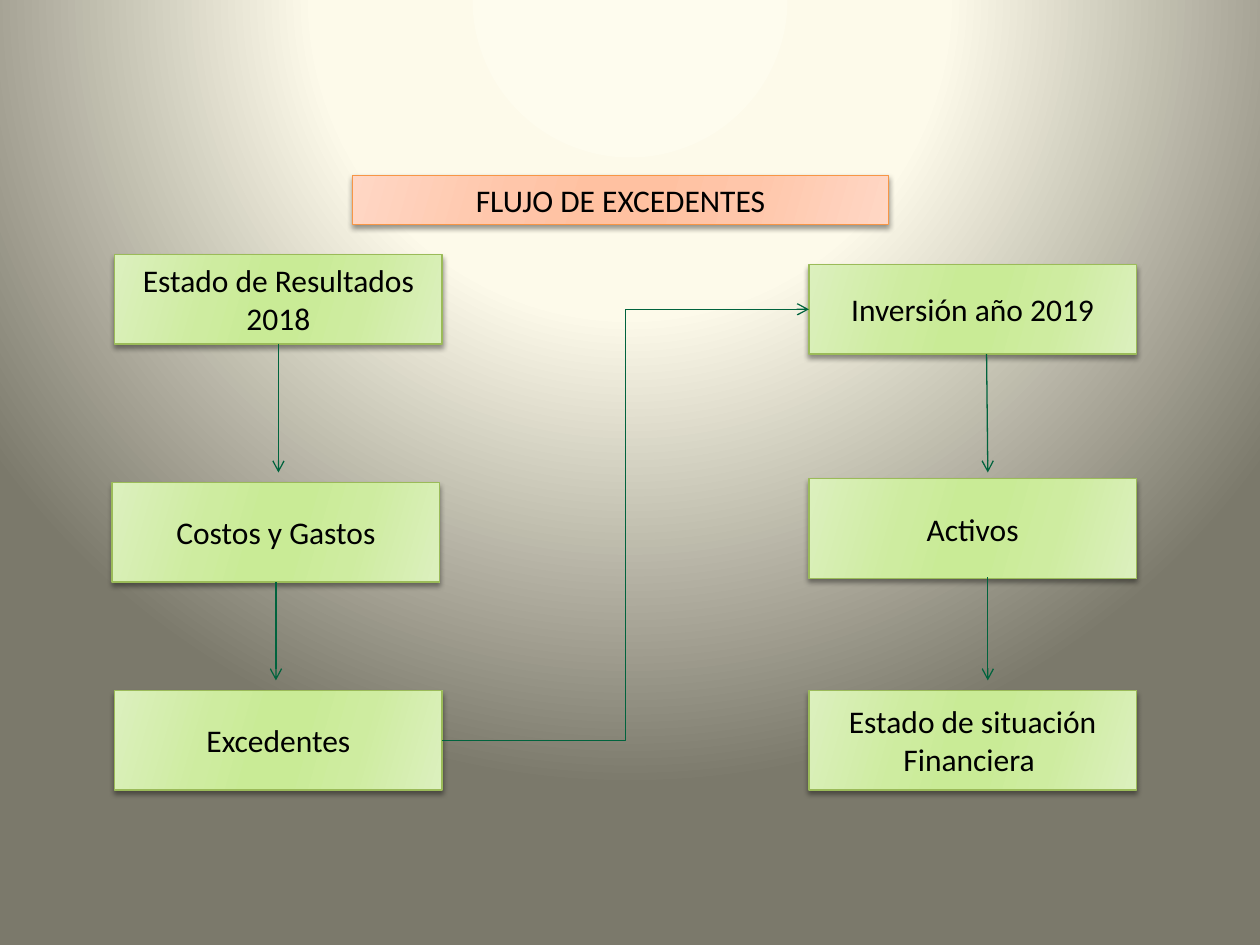
from dataclasses import dataclass

from lxml.etree import SubElement
from pptx import Presentation
from pptx.dml.color import RGBColor
from pptx.enum.shapes import MSO_CONNECTOR, MSO_SHAPE
from pptx.enum.text import MSO_ANCHOR, PP_ALIGN
from pptx.oxml import parse_xml
from pptx.oxml.ns import nsdecls, qn
from pptx.util import Inches, Pt

BLACK = RGBColor(0x00, 0x00, 0x00)
ARROW_GREEN = RGBColor(0x00, 0x63, 0x3D)
CREAM = RGBColor(0xFE, 0xFC, 0xEE)
PALE_CREAM = RGBColor(0xFD, 0xFA, 0xEA)
OLIVE_GREY = RGBColor(0x7B, 0x79, 0x6B)

TOP, LEFT, BOTTOM, RIGHT = range(4)
BOX_W = 2.6
LEFT_X, RIGHT_X = 0.91, 6.42


@dataclass(frozen=True)
class Palette:
    edge: RGBColor
    mid: RGBColor
    center: RGBColor
    line: RGBColor


@dataclass(frozen=True)
class Box:
    text: str
    x: float
    y: float
    w: float
    h: float
    palette: Palette


GREEN = Palette(RGBColor(0xDC, 0xF0, 0xBE), RGBColor(0xCE, 0xEC, 0xA0),
                RGBColor(0xC9, 0xEB, 0x96), RGBColor(0x9B, 0xBB, 0x59))
ORANGE = Palette(RGBColor(0xFF, 0xD7, 0xC5), RGBColor(0xFF, 0xC6, 0xAA),
                 RGBColor(0xFF, 0xC1, 0xA1), RGBColor(0xF7, 0x96, 0x46))

RESULTS = Box("Estado de Resultados 2018", LEFT_X, 2.02, BOX_W, 0.71, GREEN)
COSTS = Box("Costos y Gastos", 0.89, 3.83, BOX_W, 0.79, GREEN)
SURPLUS = Box("Excedentes", LEFT_X, 5.48, BOX_W, 0.79, GREEN)
INVESTMENT = Box("Inversión año 2019", RIGHT_X, 2.1, BOX_W, 0.71, GREEN)
POSITION = Box("Estado de situación Financiera ", RIGHT_X, 5.48, BOX_W, 0.79, GREEN)
ASSETS = Box("Activos", RIGHT_X, 3.8, BOX_W, 0.79, GREEN)
TITLE = Box("FLUJO DE EXCEDENTES", 2.8, 1.39, 4.25, 0.39, ORANGE)


def gradient_xml(stops: list[tuple[int, RGBColor]], direction: str) -> str:
    gs = "".join(f'<a:gs pos="{pos * 1000}"><a:srgbClr val="{color}"/></a:gs>'
                 for pos, color in stops)
    return (f'<a:gradFill {nsdecls("a")} rotWithShape="1">'
            f"<a:gsLst>{gs}</a:gsLst>{direction}</a:gradFill>")


def set_background(slide) -> None:
    stops = [(0, CREAM), (40, PALE_CREAM), (100, OLIVE_GREY)]
    circle = ('<a:path path="circle"><a:fillToRect l="50000" t="-80000" '
              'r="50000" b="180000"/></a:path>')
    bg = parse_xml(f'<p:bg {nsdecls("p", "a")}><p:bgPr>{gradient_xml(stops, circle)}'
                   "<a:effectLst/></p:bgPr></p:bg>")
    slide.element.cSld.insert(0, bg)


def add_box(slide, box: Box):
    sp = slide.shapes.add_shape(MSO_SHAPE.RECTANGLE, Inches(box.x), Inches(box.y),
                                Inches(box.w), Inches(box.h))
    pal = box.palette
    stops = [(0, pal.edge), (30, pal.mid), (45, pal.center),
             (55, pal.center), (73, pal.mid), (100, pal.edge)]
    sp.fill.gradient()
    spPr = sp.element.spPr
    angle = f'<a:lin ang="{16 * 60000}" scaled="0"/>'
    spPr.replace(spPr.find(qn("a:gradFill")), parse_xml(gradient_xml(stops, angle)))
    sp.line.color.rgb = pal.line
    sp.line.width = Pt(0.75)
    add_shadow(sp)

    tf = sp.text_frame
    tf.word_wrap = True
    tf.vertical_anchor = MSO_ANCHOR.MIDDLE
    p = tf.paragraphs[0]
    p.alignment = PP_ALIGN.CENTER
    r = p.add_run()
    r.text = box.text
    r.font.name = "Calibri"
    r.font.size = Pt(18)
    r.font.color.rgb = BLACK
    return sp


def add_shadow(sp) -> None:
    """Give the shape a soft shadow straight below it."""
    sp.shadow.inherit = False
    effects = sp.element.spPr.find(qn("a:effectLst"))
    effects.append(parse_xml(
        f'<a:outerShdw {nsdecls("a")} blurRad="{Pt(3)}" dist="{Pt(2)}" dir="5400000" '
        f'rotWithShape="0"><a:srgbClr val="{BLACK}"><a:alpha val="40000"/></a:srgbClr>'
        "</a:outerShdw>"))


def add_arrow(slide, start: tuple[float, float], end: tuple[float, float],
              kind=MSO_CONNECTOR.STRAIGHT):
    cxn = slide.shapes.add_connector(kind, *map(Inches, start + end))
    cxn.line.color.rgb = ARROW_GREEN
    cxn.line.width = Pt(0.75)
    spPr = cxn.element.spPr
    SubElement(spPr.find(qn("a:ln")), qn("a:tailEnd"), type="arrow")
    SubElement(spPr, qn("a:effectLst"))
    return cxn


def main() -> None:
    prs = Presentation()
    prs.slide_width, prs.slide_height = Inches(10), Inches(7.5)
    slide = prs.slides.add_slide(prs.slide_layouts[6])
    set_background(slide)

    boxes = (RESULTS, COSTS, SURPLUS, INVESTMENT, POSITION, ASSETS, TITLE)
    shapes = {box: add_box(slide, box) for box in boxes}

    for box, end_y in ((RESULTS, 3.75), (COSTS, 5.4)):
        x = box.x + box.w / 2
        cxn = add_arrow(slide, (x, box.y + box.h), (x, end_y))
        cxn.begin_connect(shapes[box], BOTTOM)
    add_arrow(slide, (7.84, 4.58), (7.84, 5.4))
    add_arrow(slide, (7.83, 2.81), (7.84, 3.75))

    cxn = add_arrow(slide, (3.51, 5.88), (6.42, 2.45), MSO_CONNECTOR.ELBOW)
    cxn.begin_connect(shapes[SURPLUS], RIGHT)
    cxn.end_connect(shapes[INVESTMENT], LEFT)

    prs.save("out.pptx")


if __name__ == "__main__":
    main()
